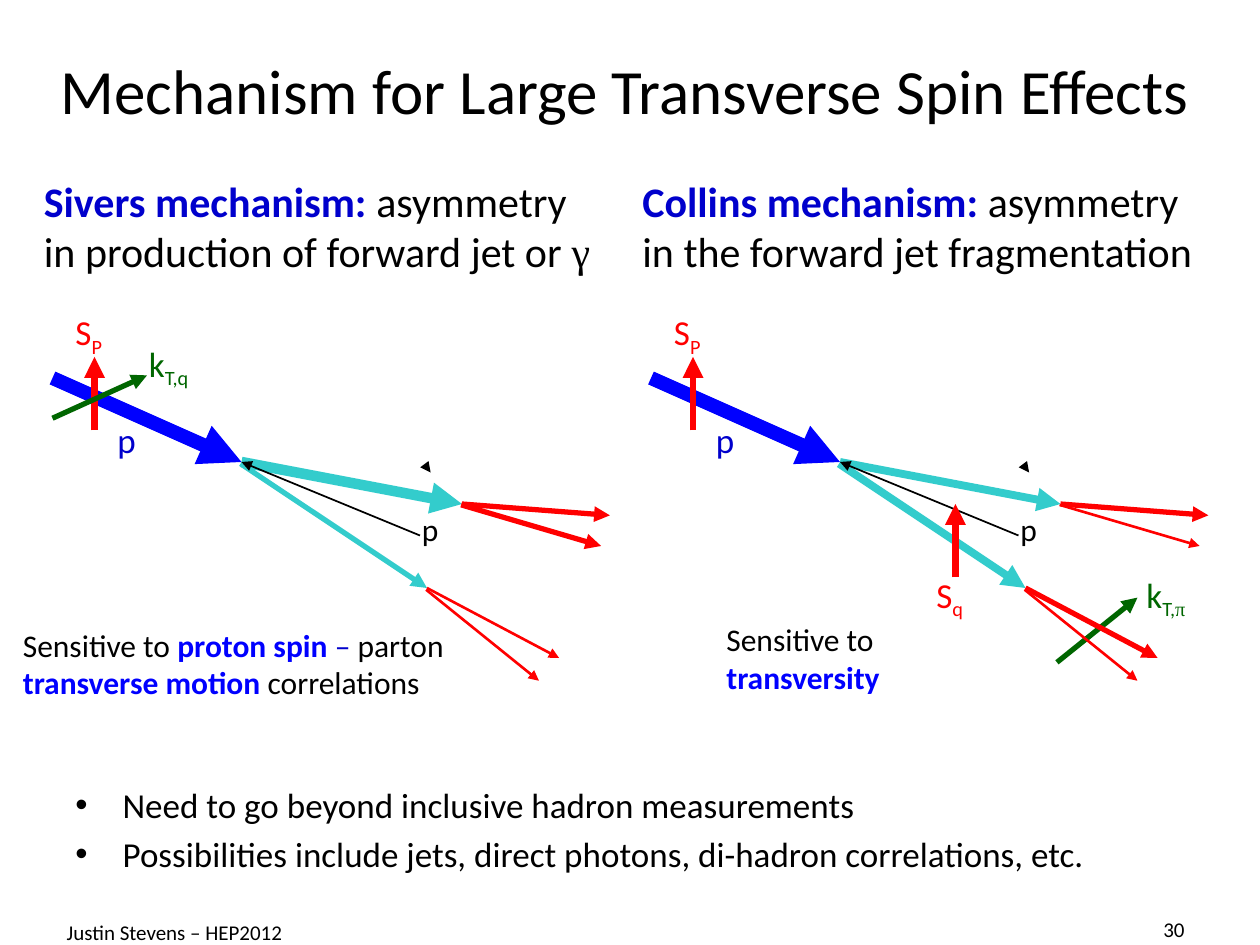
from lxml import etree
from pptx import Presentation
from pptx import util as u
from pptx.dml import color
from pptx.enum import shapes, text
from pptx.oxml import ns

Pt = u.Pt
THEME = {
    "black": "000000", "navy": "0000CC", "blue": "0000FF", "red": "FF0000",
    "green": "006600", "cyan": "33CCCC",
    "font": "Calibri", "symbol": "Times New Roman",
    "title": 36, "heading": 24, "body": 20, "note": 18, "footer": 12,
}

prs = Presentation()
prs.slide_width, prs.slide_height = Pt(720), Pt(540)
s = prs.slides.add_slide(prs.slide_layouts[5])


def add_text(x, y, w, h, size, paragraphs, align="LEFT", anchor="TOP", wrap=True):
    """Each run is (text, colour, style): b bold, s subscript, g Greek font."""
    sp = s.shapes.add_textbox(Pt(x), Pt(y), Pt(w), Pt(h))
    tf = sp.text_frame
    tf.word_wrap = wrap
    tf.vertical_anchor = getattr(text.MSO_ANCHOR, anchor)
    for i, runs in enumerate(paragraphs):
        p = tf.add_paragraph() if i else tf.paragraphs[0]
        p.alignment = getattr(text.PP_ALIGN, align)
        for words, colour, style in runs:
            r = p.add_run()
            r.text = words
            r.font.size = Pt(THEME[size])
            r.font.name = THEME["symbol" if "g" in style else "font"]
            r.font.bold = "b" in style
            r.font.color.rgb = color.RGBColor.from_string(THEME[colour])
            if "s" in style:
                r.font._element.set("baseline", "-25000")
    return tf


def add_arrow(x1, y1, x2, y2, colour, width):
    c = s.shapes.add_connector(shapes.MSO_CONNECTOR.STRAIGHT,
                               Pt(x1), Pt(y1), Pt(x2), Pt(y2))
    c.line.color.rgb = color.RGBColor.from_string(THEME[colour])
    c.line.width = Pt(width)
    etree.SubElement(c.line._get_or_add_ln(), ns.qn("a:tailEnd"), type="triangle")
    etree.SubElement(c._element.spPr, ns.qn("a:effectLst"))


# Title
sp = s.shapes.title
sp.left, sp.top, sp.width, sp.height = Pt(12), Pt(24), Pt(690), Pt(54)
tf = sp.text_frame
tf.text = "Mechanism for Large Transverse Spin Effects"
tf.vertical_anchor = text.MSO_ANCHOR.MIDDLE
p = tf.paragraphs[0]
p.alignment = text.PP_ALIGN.CENTER
r = p.runs[0]
r.font.size, r.font.name = Pt(THEME["title"]), THEME["font"]
r.font.color.rgb = color.RGBColor.from_string(THEME["black"])

# Scattering diagrams: the same geometry, with weights for Sivers and Collins
PANEL_STEP = 342
panels = [
    ("Sivers mechanism: ",
     [("asymmetry in production of forward jet or ", "black", ""), ("γ", "black", "g")],
     (30, 239, 84, 214.5)),
    ("Collins mechanism: ",
     [("asymmetry in the forward jet fragmentation", "black", "")],
     (262, 378.5, 308, 341.5)),
]
incoming = [
    (30, 216, 138, 264, "blue", 8),      # proton
    (54, 246, 54, 204, "red", 4),        # proton spin
]
outgoing = [
    (246, 269.9, 246.1, 270, "black", (0.75, 0.75)),
    (138, 264, 264, 288, "cyan", (6, 4.5)),
    (264, 288, 348.5, 294.5, "red", (3, 3)),
    (263.5, 288.5, 343.5, 312, "red", (3, 1.5)),
    (137.5, 265, 244, 336, "cyan", (3, 4.5)),
    (244, 336, 319.5, 376, "red", (1.5, 3)),
    (243.5, 337, 308, 389, "red", (1.5, 1.5)),
    (240, 306, 138, 264, "black", (1, 1)),
]
for i, (name, description, (kx1, ky1, kx2, ky2)) in enumerate(panels):
    dx = i * PANEL_STEP
    add_text(18 + dx, 96.5, 330, 65.5, "heading", [[(name, "navy", "b"), *description]])
    for x1, y1, x2, y2, colour, width in incoming:
        add_arrow(x1 + dx, y1, x2 + dx, y2, colour, width)
    add_arrow(kx1 + dx, ky1, kx2 + dx, ky2, "green", 3)
    for x1, y1, x2, y2, colour, widths in outgoing:
        add_arrow(x1 + dx, y1, x2 + dx, y2, colour, widths[i])
    add_text(36 + dx, 174, 48, 31, "body", [[("S", "red", ""), ("P", "red", "s")]])
    add_text(60 + dx, 235.5, 27, 31, "body", [[("p", "navy", "")]], wrap=False)
    add_text(234 + dx, 288, 18, 29, "note", [[("p", "black", "")]])

# Labels found in one diagram only
add_text(78, 192, 48, 31, "body", [[("k", "green", ""), ("T,q", "green", "s")]])
add_arrow(546, 330, 546, 288, "red", 4)
add_text(528, 324, 36, 31, "body", [[("S", "red", ""), ("q", "red", "s")]])
add_text(648, 324, 48, 31, "body",
         [[("k", "green", ""), ("T,", "green", "s"), ("π", "green", "sg")]])

# Sensitivity notes
add_text(6, 354, 258, 51, "note", [[
    ("Sensitive to ", "black", ""), ("proton spin ", "blue", "b"), ("– ", "navy", ""),
    ("parton ", "black", ""), ("transverse motion ", "blue", "b"),
    ("correlations", "black", "")]])
add_text(408, 351, 126, 51, "note",
         [[("Sensitive to ", "black", ""), ("transversity", "blue", "b")]])

# Conclusions
tf = add_text(36, 444, 654, 60, "body", [
    [("Need to go beyond inclusive hadron measurements", "black", "")],
    [("Possibilities include jets, direct photons, di-hadron correlations, etc.",
      "black", "")]])
for p in tf.paragraphs:
    p.space_after = Pt(4)
    pPr = p._p.get_or_add_pPr()
    pPr.set("marL", str(Pt(27)))
    pPr.set("indent", str(-Pt(27)))
    etree.SubElement(pPr, ns.qn("a:buFont"), typeface="Arial")
    etree.SubElement(pPr, ns.qn("a:buChar"), char="•")

# Footer
add_text(516, 522, 168, 18, "footer", [[("30", "black", "")]], "RIGHT", "MIDDLE")
add_text(0, 518.5, 199.5, 28.5, "footer", [[("Justin Stevens – HEP2012", "black", "")]],
         "CENTER", "MIDDLE")

prs.save("out.pptx")
